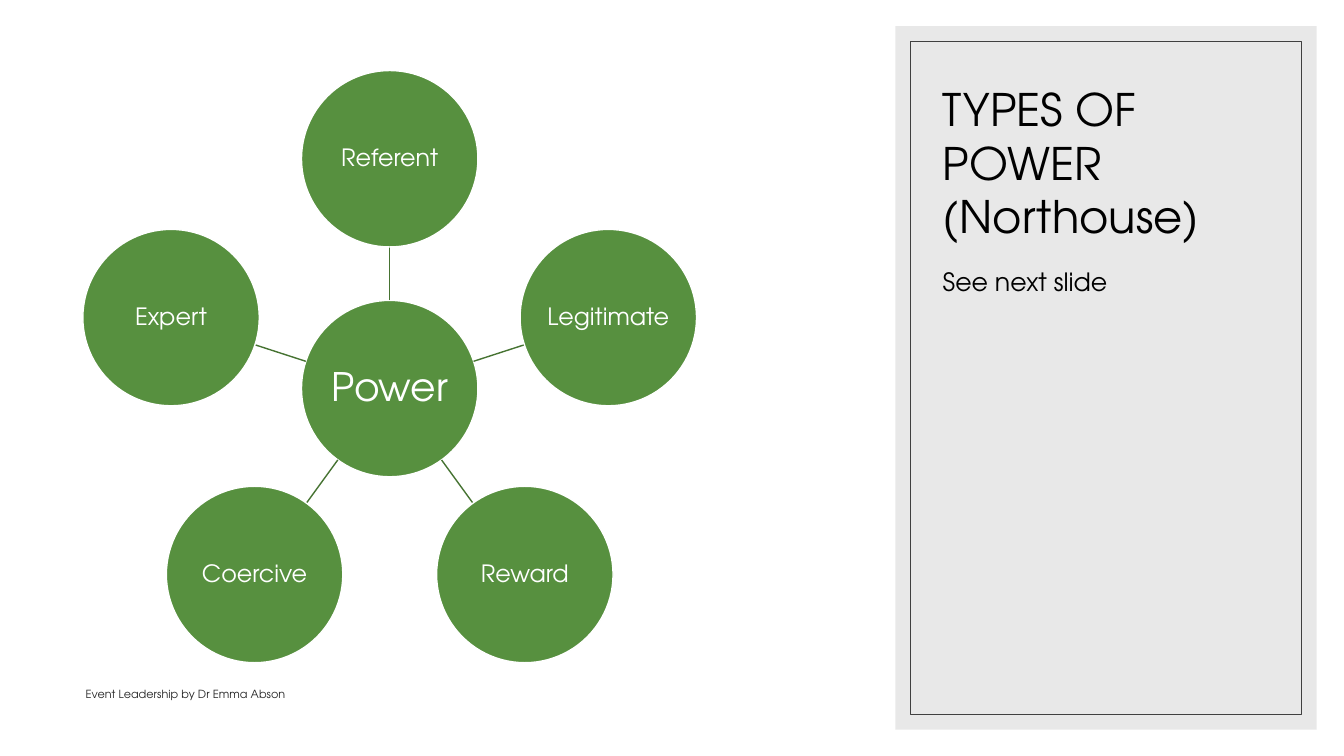
from math import cos, radians, sin

from lxml import etree
from pptx import Presentation
from pptx.dml.color import RGBColor
from pptx.enum.shapes import MSO_CONNECTOR, MSO_SHAPE
from pptx.enum.text import MSO_ANCHOR, MSO_AUTO_SIZE, PP_ALIGN
from pptx.oxml.ns import qn
from pptx.util import Inches, Pt

RECTANGLE, OVAL = MSO_SHAPE.RECTANGLE, MSO_SHAPE.OVAL
STRAIGHT = MSO_CONNECTOR.STRAIGHT
TOP, MIDDLE, BOTTOM = MSO_ANCHOR.TOP, MSO_ANCHOR.MIDDLE, MSO_ANCHOR.BOTTOM
LEFT, CENTER = PP_ALIGN.LEFT, PP_ALIGN.CENTER
NO_AUTOFIT = MSO_AUTO_SIZE.NONE

FONT = "TeX Gyre Adventor"
COLORS = {
    "panel": "D9D9D9",
    "frame": "404040",
    "heading": "000000",
    "footer": "262626",
    "circle": "57903F",
    "spoke": "467332",
    "white": "FFFFFF",
}
POWER_TYPES = ["Referent", "Legitimate", "Reward", "Coercive", "Expert"]


def color(name):
    return RGBColor.from_string(COLORS[name])


def write(shape, text, size, color_name, anchor, align=LEFT):
    frame = shape.text_frame
    frame.text = text
    frame.word_wrap = True
    frame.auto_size = NO_AUTOFIT
    frame.vertical_anchor = anchor
    paragraph = frame.paragraphs[0]
    paragraph.alignment = align
    paragraph.space_before = Pt(0)
    font = paragraph.font
    font.name, font.size, font.bold = FONT, Pt(size), False
    font.color.rgb = color(color_name)
    return paragraph


def place(shape, left, top, width, height):
    shape.left, shape.top = Inches(left), Inches(top)
    shape.width, shape.height = Inches(width), Inches(height)


def add_side_panel(slide, left, top, width, height):
    """Draw the framed grey panel behind the title and body placeholders."""
    panel = slide.shapes.add_shape(
        RECTANGLE, Inches(left), Inches(top), Inches(width), Inches(height))
    panel.fill.solid()
    panel.fill.fore_color.rgb = color("panel")
    panel_color = panel.fill._xPr.find(qn("a:solidFill"))[0]
    etree.SubElement(panel_color, qn("a:alpha"), val="60000")
    panel.line.fill.background()

    margin = 0.15
    border = slide.shapes.add_shape(
        RECTANGLE, Inches(left + margin), Inches(top + margin),
        Inches(width - 2 * margin), Inches(height - 2 * margin))
    border.fill.background()
    border.line.color.rgb = color("frame")
    border.line.width = Pt(0.5)

    for layer, shape in enumerate((panel, border)):
        shape.shadow.inherit = False
        slide.shapes._spTree.insert(2 + layer, shape._element)

    title = slide.shapes.title
    place(title, left + 0.37, top + 0.4, 3.46, 1.8)
    write(title, "TYPES OF POWER (Northouse)", 32, "heading", BOTTOM)

    unused, body = slide.placeholders[1], slide.placeholders[2]
    unused._element.getparent().remove(unused._element)
    place(body, left + 0.37, top + 2.3, 3.46, 3.94)
    note = write(body, "See next slide", 18, "heading", TOP)
    note.line_spacing = 1.1


def add_circle(slide, center_x, center_y, diameter, label, size):
    circle = slide.shapes.add_shape(
        OVAL, Inches(center_x - diameter / 2), Inches(center_y - diameter / 2),
        Inches(diameter), Inches(diameter))
    circle.shadow.inherit = False
    circle.fill.solid()
    circle.fill.fore_color.rgb = color("circle")
    circle.line.color.rgb = color("white")
    circle.line.width = Pt(1)
    paragraph = write(circle, label, size, "white", MIDDLE, CENTER)
    paragraph.line_spacing = 0.9
    frame = circle.text_frame
    frame.word_wrap = False
    frame.margin_left = frame.margin_right = Inches(0.01)
    frame.margin_top = frame.margin_bottom = Inches(0.01)


def add_power_wheel(slide, left, top, width):
    """Place the power types evenly around the hub, clockwise from the top."""
    diameter = 1.75
    hub_radius = diameter / 2
    orbit = 2.28
    hub_x, hub_y = left + width / 2, top + hub_radius + orbit
    add_circle(slide, hub_x, hub_y, diameter, "Power", 28)

    for position, power_type in enumerate(POWER_TYPES):
        angle = radians(360 / len(POWER_TYPES) * position - 90)

        def point(distance):
            return hub_x + distance * cos(angle), hub_y + distance * sin(angle)

        ends = point(hub_radius) + point(orbit - hub_radius)
        spoke = slide.shapes.add_connector(STRAIGHT, *map(Inches, ends))
        spoke.line.color.rgb = color("spoke")
        spoke.line.width = Pt(1)
        etree.SubElement(spoke._element.spPr, qn("a:effectLst"))
        add_circle(slide, *point(orbit), diameter, power_type, 17)


def add_footer(slide, left, top, width, height):
    footer = slide.shapes.add_textbox(
        Inches(left), Inches(top), Inches(width), Inches(height))
    paragraph = write(
        footer, "Event Leadership by Dr Emma Abson", 8, "footer", BOTTOM)
    paragraph.space_after = Pt(6)


def main():
    presentation = Presentation()
    presentation.slide_width = Inches(13.33)
    presentation.slide_height = Inches(7.5)
    caption_layout = presentation.slide_layouts[7]
    slide = presentation.slides.add_slide(caption_layout)
    add_side_panel(slide, 8.88, 0.26, 4.18, 6.98)
    add_footer(slide, 0.75, 6.6, 5.01, 0.4)
    add_power_wheel(slide, 0.82, 0.7, 6.09)
    presentation.save("out.pptx")


if __name__ == "__main__":
    main()
